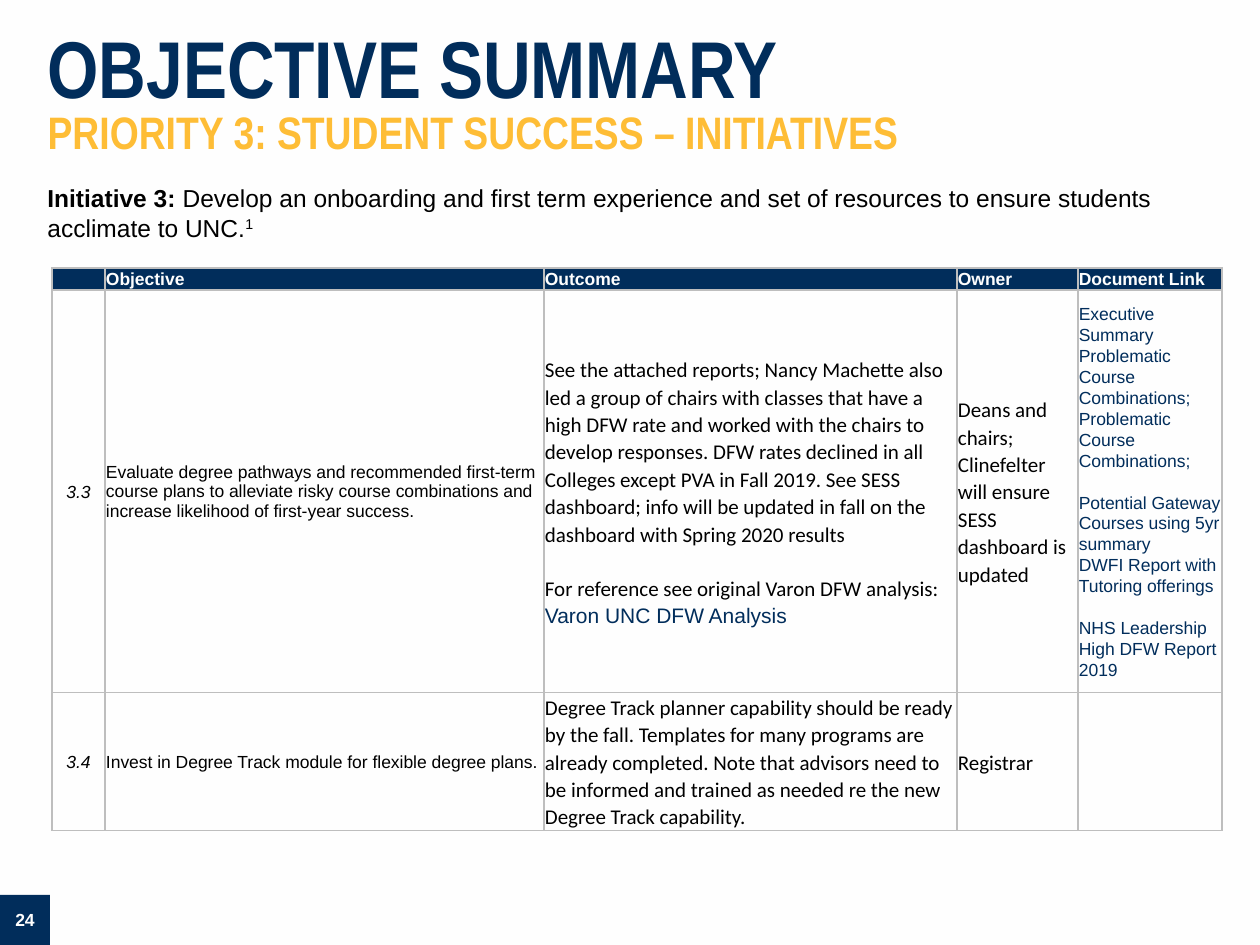
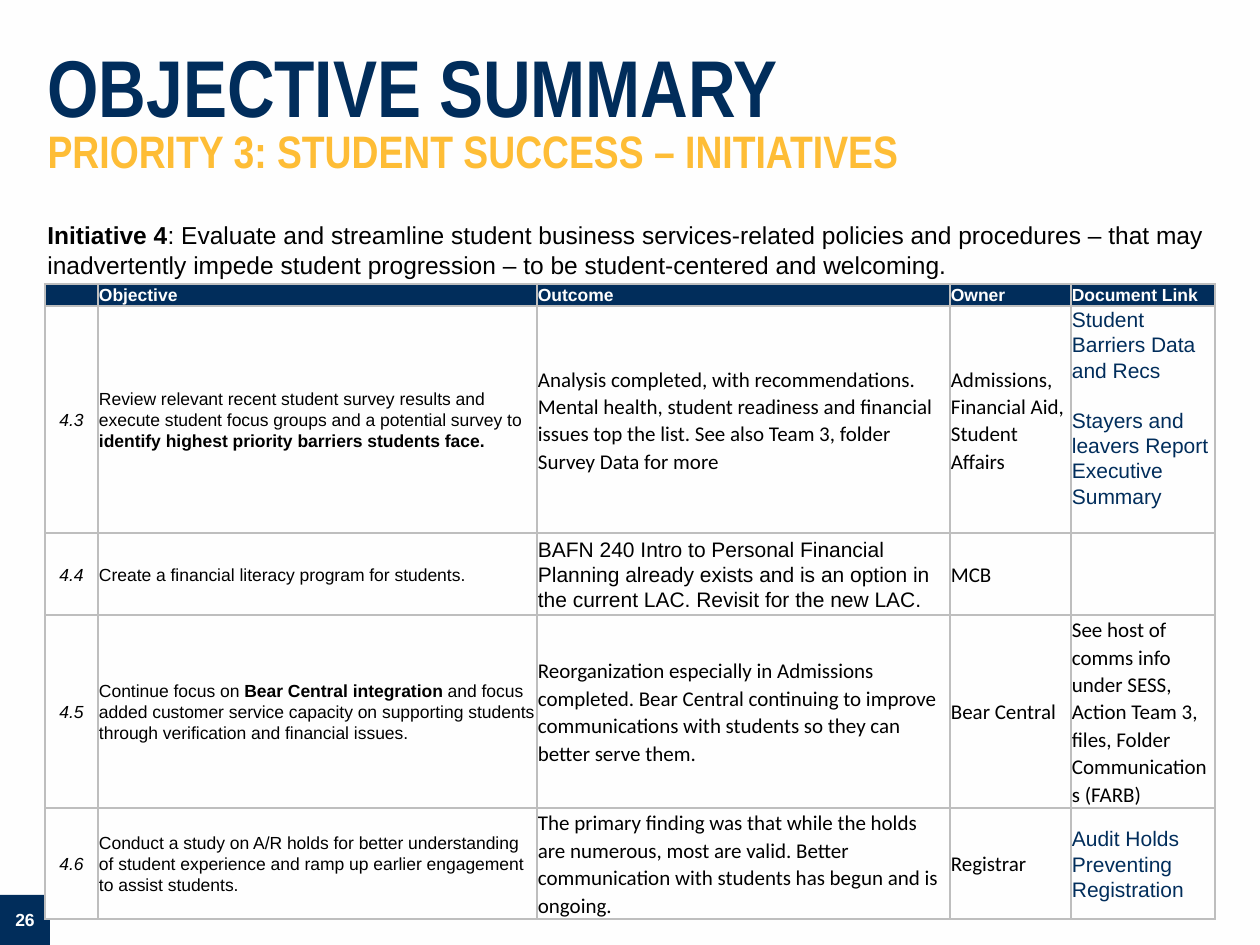
import dataclasses

import lxml.etree
import pptx
import pptx.dml.color
import pptx.enum.shapes
import pptx.enum.text
import pptx.oxml.ns
import pptx.util

PX_PER_INCH = 126
COLORS = {"navy": "012D5B", "gold": "FEBD36", "white": "FEFEFE",
          "black": "000000", "grid": "BEBEBE"}
COLUMN_WIDTHS = [53, 439, 413, 121, 144]
HEADERS = ["", "Objective", "Outcome", "Owner", "Document Link"]
LEFT = pptx.enum.text.PP_ALIGN.LEFT
CENTER = pptx.enum.text.PP_ALIGN.CENTER
TOP = pptx.enum.text.MSO_ANCHOR.TOP
MIDDLE = pptx.enum.text.MSO_ANCHOR.MIDDLE


@dataclasses.dataclass
class Style:
    font: str = "Arial"
    size: float = 10
    color: str = "black"
    bold: bool = False
    italic: bool = False
    align: int = LEFT
    spacing: float = 1.07


@dataclasses.dataclass
class Line:
    """One paragraph; **marks** enclose bold words, gap is points before it."""
    text: str
    style: Style
    gap: float = 0


HEADER = Style(color="white", bold=True, spacing=1)
PAGE = Style(color="white", bold=True, align=CENTER, spacing=1)
NUMBER = Style(italic=True, align=CENTER)
OBJECTIVE = Style()
TIGHT_OBJECTIVE = Style(spacing=1)
NOTE = Style(font="Calibri", size=12)
PLAIN = Style(size=12)
LINK = Style(color="navy")
LARGE_LINK = Style(size=12, color="navy")
INITIATIVE = Style(size=14, spacing=1)
TITLE = Style(font="Arial Narrow", size=46, color="navy", bold=True)
SUBTITLE = Style(font="Arial Narrow", size=26, color="gold", bold=True)


def px(length):
    return round(length * 914400 / PX_PER_INCH)


def rgb(name):
    return pptx.dml.color.RGBColor.from_string(COLORS[name])


def format_run(run, style, bold=False):
    run.font.name = style.font
    run.font.size = pptx.util.Pt(style.size)
    run.font.color.rgb = rgb(style.color)
    run.font.bold = style.bold or bold
    run.font.italic = style.italic


def write_lines(text_frame, lines):
    for index, line in enumerate(lines):
        paragraph = text_frame.add_paragraph() if index else text_frame.paragraphs[0]
        paragraph.alignment = line.style.align
        paragraph.line_spacing = line.style.spacing
        if line.gap:
            paragraph.space_before = pptx.util.Pt(line.gap)
        for position, part in enumerate(line.text.split("**")):
            if part:
                run = paragraph.add_run()
                run.text = part
                format_run(run, line.style, bold=position % 2 == 1)


def add_title(slide, top):
    title = slide.shapes.title
    title.left, title.top, title.width, title.height = map(px, (35, top, 1225, 155))
    text_frame = title.text_frame
    text_frame.auto_size = pptx.enum.text.MSO_AUTO_SIZE.NONE
    text_frame.vertical_anchor = MIDDLE
    text_frame.margin_left = text_frame.margin_right = pptx.util.Inches(0.1)
    text_frame.margin_top = text_frame.margin_bottom = pptx.util.Inches(0.1)
    text_frame.text = "OBJECTIVE SUMMARY\vPRIORITY 3: STUDENT SUCCESS – INITIATIVES"
    paragraph = text_frame.paragraphs[0]
    paragraph.alignment = LEFT
    paragraph.line_spacing = 0.8
    for run, style in zip(paragraph.runs, (TITLE, SUBTITLE)):
        format_run(run, style)


def add_page_number(slide, number):
    box = slide.shapes.add_shape(pptx.enum.shapes.MSO_SHAPE.RECTANGLE,
                                 0, px(895), px(50), px(50))
    box.shadow.inherit = False
    box.fill.solid()
    box.fill.fore_color.rgb = rgb("navy")
    box.line.fill.background()
    box.text_frame.vertical_anchor = MIDDLE
    write_lines(box.text_frame, [Line(number, PAGE)])


def add_initiative(slide, top, text, footnote=""):
    box = slide.shapes.add_textbox(px(35), px(top), px(1191), px(62))
    box.text_frame.word_wrap = True
    write_lines(box.text_frame, [Line(text, INITIATIVE)])
    if footnote:
        run = box.text_frame.paragraphs[0].add_run()
        run.text = footnote
        format_run(run, INITIATIVE)
        run.font._element.set("baseline", "30000")


def add_borders(cell):
    properties = cell._tc.get_or_add_tcPr()
    for side in ("a:lnL", "a:lnR", "a:lnT", "a:lnB"):
        line = lxml.etree.SubElement(properties, pptx.oxml.ns.qn(side), w="12700")
        fill = lxml.etree.SubElement(line, pptx.oxml.ns.qn("a:solidFill"))
        lxml.etree.SubElement(fill, pptx.oxml.ns.qn("a:srgbClr"), val=COLORS["grid"])


def fill_cell(cell, lines, color, anchor=MIDDLE):
    add_borders(cell)
    cell.fill.solid()
    cell.fill.fore_color.rgb = rgb(color)
    cell.vertical_anchor = anchor
    cell.margin_left = cell.margin_right = cell.margin_top = px(1)
    cell.margin_bottom = 0
    if lines:
        write_lines(cell.text_frame, lines)
    else:
        # Keeps an empty cell from stretching its row
        lxml.etree.SubElement(cell.text_frame.paragraphs[0]._p,
                              pptx.oxml.ns.qn("a:endParaRPr"), sz="1000")


def add_objectives(slide, left, top, heights, rows, top_cells=()):
    table = slide.shapes.add_table(len(heights), len(COLUMN_WIDTHS), px(left), px(top),
                                   px(sum(COLUMN_WIDTHS)), px(sum(heights))).table
    table.first_row = table.horz_banding = False
    for column, width in zip(table.columns, COLUMN_WIDTHS):
        column.width = px(width)
    for row, height in zip(table.rows, heights):
        row.height = px(height)
    header = [[Line(text, HEADER)] if text else [] for text in HEADERS]
    for row_index, cells in enumerate([header] + rows):
        color = "white" if row_index else "navy"
        for column_index, lines in enumerate(cells):
            anchor = TOP if (row_index, column_index) in top_cells else MIDDLE
            fill_cell(table.cell(row_index, column_index), lines, color, anchor)


def add_summary_slide(presentation, title_top, page):
    slide = presentation.slides.add_slide(presentation.slide_layouts[5])
    slide.background.fill.solid()
    slide.background.fill.fore_color.rgb = rgb("white")
    add_page_number(slide, page)
    add_title(slide, title_top)
    return slide


def build_onboarding(presentation):
    slide = add_summary_slide(presentation, 20, "24")
    add_initiative(slide, 177, "**Initiative 3: **Develop an onboarding and first term "
                   "experience and set of resources to ensure students acclimate to UNC.", "1")
    rows = [
        [[Line("3.3", NUMBER)],
         [Line("Evaluate degree pathways and recommended first-term course plans to "
               "alleviate risky course combinations and increase likelihood of "
               "first-year success.", TIGHT_OBJECTIVE)],
         [Line("See the attached reports; Nancy Machette also led a group of chairs with "
               "classes that have a high DFW rate and worked with the chairs to develop "
               "responses. DFW rates declined in all Colleges except PVA in Fall 2019. "
               "See SESS dashboard; info will be updated in fall on the dashboard with "
               "Spring 2020 results", NOTE),
          Line("For reference see original Varon DFW analysis:", NOTE, gap=15.6),
          Line("Varon UNC DFW Analysis", LARGE_LINK)],
         [Line("Deans and chairs; Clinefelter will ensure SESS dashboard is updated", NOTE)],
         [Line("Executive Summary Problematic Course Combinations;", LINK),
          Line("Problematic Course Combinations;", LINK),
          Line("Potential Gateway Courses using 5yr summary", LINK, gap=12),
          Line("DWFI Report with Tutoring offerings", LINK),
          Line("NHS Leadership High DFW Report 2019", LINK, gap=12)]],
        [[Line("3.4", NUMBER)],
         [Line("Invest in Degree Track module for flexible degree plans.", TIGHT_OBJECTIVE)],
         [Line("Degree Track planner capability should be ready by the fall. Templates for "
               "many programs are already completed. Note that advisors need to be informed "
               "and trained as needed re the new Degree Track capability.", NOTE)],
         [Line("Registrar", NOTE)],
         []],
    ]
    add_objectives(slide, 52, 268, [22, 397, 138], rows)


def build_services(presentation):
    slide = add_summary_slide(presentation, 39, "26")
    add_initiative(slide, 214, "**Initiative 4**: Evaluate and streamline student business "
                   "services-related policies and procedures – that may inadvertently impede "
                   "student progression – to be student-centered and welcoming.")
    rows = [
        [[Line("4.3", NUMBER)],
         [Line("Review relevant recent student survey results and execute student focus "
               "groups and a potential survey to** identify highest priority barriers "
               "students face.**", OBJECTIVE)],
         [Line("Analysis completed, with recommendations. Mental health, student readiness "
               "and financial issues top the list. See also Team 3, folder Survey Data "
               "for more", NOTE)],
         [Line("Admissions, Financial Aid, Student Affairs", NOTE)],
         [Line("Student Barriers Data and Recs", LARGE_LINK),
          Line("Stayers and leavers Report Executive Summary", LARGE_LINK, gap=14.5)]],
        [[Line("4.4", NUMBER)],
         [Line("Create a financial literacy program for students.", OBJECTIVE)],
         [Line("BAFN 240 Intro to Personal Financial Planning already exists and is an "
               "option in the current LAC. Revisit for the new LAC.", PLAIN)],
         [Line("MCB", NOTE)],
         []],
        [[Line("4.5", NUMBER)],
         [Line("Continue focus on **Bear Central integration **and focus added customer "
               "service capacity on supporting students through verification and "
               "financial issues.", OBJECTIVE)],
         [Line("Reorganization especially in Admissions completed. Bear Central continuing "
               "to improve communications with students so they can better serve them.",
               NOTE)],
         [Line("Bear Central", NOTE)],
         [Line("See host of comms info under SESS, Action Team 3, files, Folder "
               "Communications (FARB)", NOTE)]],
        [[Line("4.6", NUMBER)],
         [Line("Conduct a study on A/R holds for better understanding of student experience "
               "and ramp up earlier engagement to assist students.", OBJECTIVE)],
         [Line("The primary finding was that while the holds are numerous, most are valid. "
               "Better communication with students has begun and is ongoing.", NOTE)],
         [Line("Registrar", NOTE)],
         [Line("Audit Holds Preventing Registration", LARGE_LINK)]],
    ]
    add_objectives(slide, 45, 284, [22, 227, 76, 193, 111], rows, top_cells={(1, 4)})


def main():
    presentation = pptx.Presentation()
    presentation.slide_width, presentation.slide_height = px(1260), px(945)
    build_onboarding(presentation)
    build_services(presentation)
    presentation.save("out.pptx")


if __name__ == "__main__":
    main()
